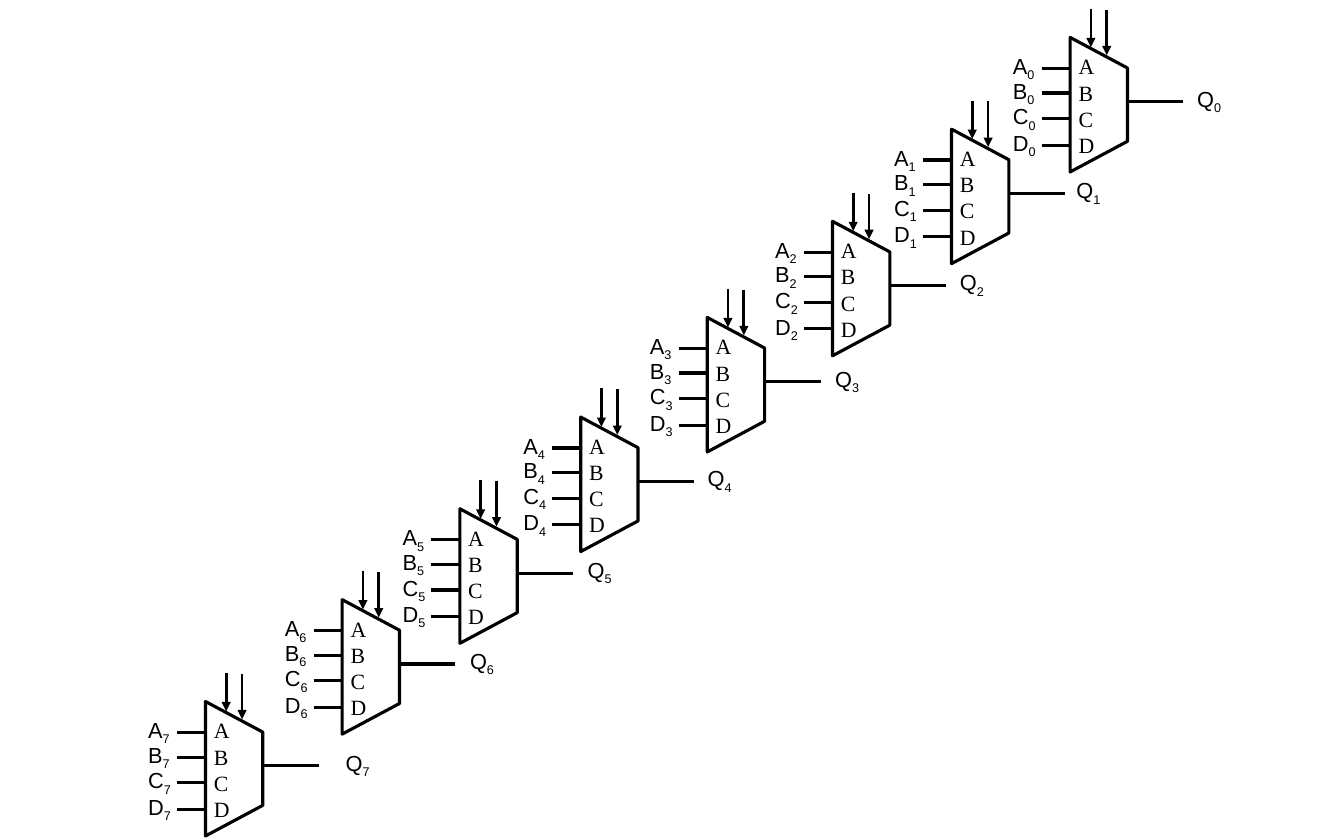
from dataclasses import dataclass

from lxml.etree import SubElement
from pptx import Presentation
from pptx.dml.color import RGBColor as RGB
from pptx.enum.shapes import MSO_CONNECTOR as CONN, MSO_SHAPE as SHAPE
from pptx.enum.text import MSO_ANCHOR as ANCHOR, MSO_AUTO_SIZE as AUTO, PP_ALIGN as ALIGN
from pptx.oxml.ns import qn
from pptx.util import Cm, Pt


@dataclass(frozen=True)
class Theme:
    ink: RGB = RGB(0, 0, 0)
    paper: RGB = RGB(255, 255, 255)
    pin_font: str = "Times New Roman"
    signal_font: str = "Arial"
    size: float = 14
    pin_spacing: float = 16.8
    line: float = 2
    arrow: float = 1.75


BODY_W, BODY_H, SLANT = 1.30, 3.05, 0.534
PINS = {"A": 0.70, "B": 1.26, "C": 1.84, "D": 2.44}
SELECTS = [(0.47, -0.65, 0.22), (0.83, -0.63, 0.40)]
INPUT_LEN, OUTPUT_LEN, OUTPUT_Y = 0.65, 1.27, 1.46
LABEL_W, LABEL_H = 1.07, 0.86
LABEL_X, LABEL_RISE = -1.55, 0.48
MUXES = [
    (24.27, 0.85, 2.63),
    (21.58, 2.93, 2.58),
    (18.88, 5.02, 2.64),
    (16.04, 7.20, 2.65),
    (13.17, 9.46, 2.63),
    (10.43, 11.54, 2.65),
    (7.76, 13.60, 2.65),
    (4.66, 15.91, 2.93),
]


class Diagram:
    def __init__(self, slide, theme):
        self.slide = slide
        self.theme = theme
        self.shapes = slide.shapes

    def body(self, x, y):
        dx = (BODY_W - BODY_H) / 2
        sp = self.shapes.add_shape(SHAPE.TRAPEZOID, Cm(x + dx), Cm(y - dx), Cm(BODY_H), Cm(BODY_W))
        sp.rotation = 90
        sp.adjustments[0] = SLANT
        sp.shadow.inherit = False
        sp.fill.solid()
        sp.fill.fore_color.rgb = self.theme.paper
        sp.line.color.rgb = self.theme.ink
        sp.line.width = Pt(self.theme.line)

    def line(self, x1, y1, x2, y2, arrow=False):
        c = self.shapes.add_connector(CONN.STRAIGHT, Cm(x1), Cm(y1), Cm(x2), Cm(y2))
        c.line.color.rgb = self.theme.ink
        c.line.width = Pt(self.theme.arrow if arrow else self.theme.line)
        if arrow:
            SubElement(c.line._get_or_add_ln(), qn("a:tailEnd"), type="triangle")
        SubElement(c._element.spPr, qn("a:effectLst"))

    def text_frame(self, x, y, w, h, wrap):
        tf = self.shapes.add_textbox(Cm(x), Cm(y), Cm(w), Cm(h)).text_frame
        tf.word_wrap = wrap
        tf.vertical_anchor = ANCHOR.TOP
        return tf

    def font(self, r, name):
        r.font.name = name
        r.font.size = Pt(self.theme.size)
        r.font.color.rgb = self.theme.ink

    def pin_names(self, x, y):
        tf = self.text_frame(x - 0.06, y + 0.23, 1.22, 2.79, True)
        tf.text = "\n".join(PINS)
        for p in tf.paragraphs:
            p.alignment = ALIGN.LEFT
            p.line_spacing = Pt(self.theme.pin_spacing)
            self.font(p.runs[0], self.theme.pin_font)

    def signal(self, x, y, name, index):
        tf = self.text_frame(x, y, LABEL_W, LABEL_H, False)
        tf.auto_size = AUTO.SHAPE_TO_FIT_TEXT
        p = tf.paragraphs[0]
        for text in (name, str(index)):
            r = p.add_run()
            r.text = text
            self.font(r, self.theme.signal_font)
        r.font._element.set("baseline", "-25000")

    def mux(self, index, x, y, output_dx):
        self.shapes = self.slide.shapes.add_group_shape().shapes
        self.body(x, y)
        right, out_y = x + BODY_W, y + OUTPUT_Y
        self.line(right, out_y, right + OUTPUT_LEN, out_y)
        for dx, top, bottom in SELECTS:
            self.line(x + dx, y + top, x + dx, y + bottom, arrow=True)
        self.pin_names(x, y)
        self.signal(x + output_dx, y + 0.96, "Q", index)
        for name, dy in PINS.items():
            self.line(x - INPUT_LEN, y + dy, x, y + dy)
            self.signal(x + LABEL_X, y + dy - LABEL_RISE, name, index)


def main():
    prs = Presentation()
    prs.slide_width, prs.slide_height = Cm(30.48), Cm(19.05)
    s = prs.slides.add_slide(prs.slide_layouts[6])
    diagram = Diagram(s, Theme())
    for index, (x, y, output_dx) in enumerate(MUXES):
        diagram.mux(index, x, y, output_dx)
    prs.save("out.pptx")


if __name__ == "__main__":
    main()
